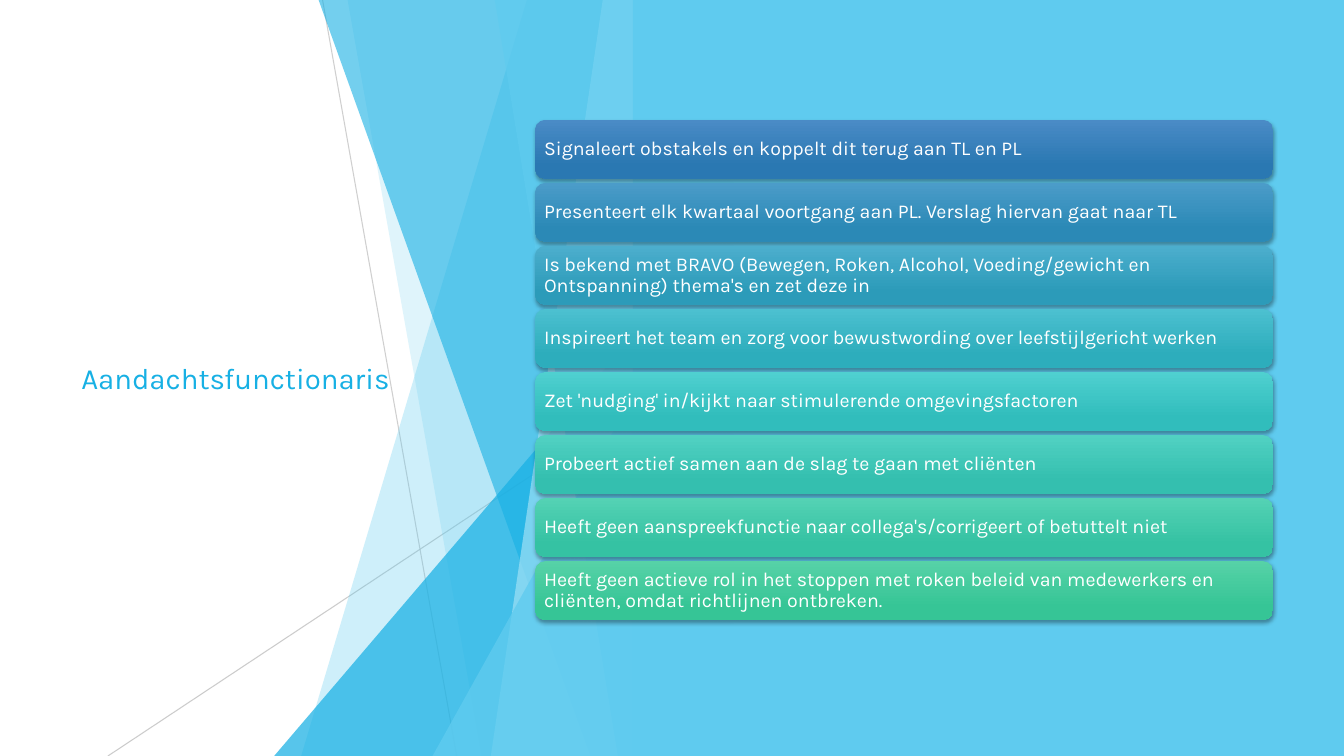
from lxml.etree import SubElement
from pptx import Presentation
from pptx.dml.color import RGBColor
from pptx.enum.shapes import MSO_CONNECTOR, MSO_SHAPE
from pptx.enum.text import MSO_ANCHOR, PP_ALIGN
from pptx.oxml.ns import qn
from pptx.util import Cm, Pt

SLIDE_W, SLIDE_H = 33.87, 19.05
PANEL_LEFT = 15.95
FONT = "Karla"

# Lines: start and end as (distance from the right edge, height fraction), opacity
LINES = [((7.82, 0), (4.44, 1), 75), ((0, 0.54), (13.23, 1), 80)]
# Bands: distance from the right edge at top and bottom, colour, opacity
BACK_BANDS = [(2.67, 8.36, "5FCBEF", 30), (7.19, 3.81, "5FCBEF", 20)]
FRONT_BANDS = [
    (7.92, 1.07, "17B0E4", 60),
    (0.76, 3.58, "9FE0F5", 70),
    (3.48, 0.38, "5FCBEF", 65),
]
# Bars: text, top colour, bottom colour
TASKS = [
    ("Signaleert obstakels en koppelt dit terug aan TL en PL", "4A8BC6", "2A78B2"),
    ("Presenteert elk kwartaal voortgang aan PL. Verslag hiervan gaat naar TL",
     "4B9CC9", "2B89B6"),
    ("Is bekend met BRAVO (Bewegen, Roken, Alcohol, Voeding/gewicht en "
     "Ontspanning) thema's en zet deze in", "4CAECD", "2C9BB9"),
    ("Inspireert het team en zorg voor bewustwording over leefstijlgericht werken",
     "4CC0D0", "2DADBC"),
    ("Zet 'nudging' in/kijkt naar stimulerende omgevingsfactoren", "4FD0D0", "31BDBC"),
    ("Probeert actief samen aan de slag te gaan met cliënten", "51D1C2", "34BFAF"),
    ("Heeft geen aanspreekfunctie naar collega's/corrigeert of betuttelt niet",
     "54D2B4", "35C2A3"),
    ("Heeft geen actieve rol in het stoppen met roken beleid van medewerkers en "
     "cliënten, omdat richtlijnen ontbreken.", "56D2A7", "36C596"),
]


def set_color(color, value, opacity=100):
    color.rgb = RGBColor.from_string(value)
    if opacity < 100:
        clr = color._xFill.find(qn("a:srgbClr"))
        SubElement(clr, qn("a:alpha"), val=str(opacity * 1000))


def paint(s, value, opacity=100):
    """Give a shape a flat fill without outline or shadow."""
    s.shadow.inherit = False
    s.line.fill.background()
    s.fill.solid()
    set_color(s.fill.fore_color, value, opacity)


def write(s, text, size, color):
    """Put one left-aligned, vertically centred paragraph in a shape."""
    tf = s.text_frame
    tf.text = text
    tf.word_wrap = True
    tf.vertical_anchor = MSO_ANCHOR.MIDDLE
    p = tf.paragraphs[0]
    p.alignment = PP_ALIGN.LEFT
    font = p.runs[0].font
    font.name, font.size = FONT, Pt(size)
    set_color(font.color, color)
    return p


def add_line(shapes, x1, y1, x2, y2, opacity):
    s = shapes.add_connector(MSO_CONNECTOR.STRAIGHT, Cm(x1), Cm(y1), Cm(x2), Cm(y2))
    s.line.width = Pt(0.75)
    s.line.fill.solid()
    set_color(s.line.fill.fore_color, "BFBFBF", opacity)
    SubElement(s._element.spPr, qn("a:effectLst"))


def add_band(shapes, right, height, top_gap, bottom_gap, color, opacity):
    """Add a full-height band with a slanted left side."""
    fb = shapes.build_freeform(Cm(right - top_gap), 0)
    fb.add_line_segments([(Cm(right), 0), (Cm(right), Cm(height)),
                          (Cm(right - bottom_gap), Cm(height))])
    paint(fb.convert_to_shape(), color, opacity)


def add_corner(shapes, right, bottom, width, height, color, opacity):
    """Add a triangle with its right angle at the bottom right."""
    s = shapes.add_shape(MSO_SHAPE.ISOSCELES_TRIANGLE, Cm(right - width),
                         Cm(bottom - height), Cm(width), Cm(height))
    s.adjustments[0] = 1
    paint(s, color, opacity)


def add_facets(shapes, right, height):
    for (d1, f1), (d2, f2), opacity in LINES:
        add_line(shapes, right - d1, height * f1, right - d2, height * f2, opacity)
    for band in BACK_BANDS:
        add_band(shapes, right, height, *band)
    add_corner(shapes, right, height, 9.04, 10.59, "17B0E4", 72)
    for band in FRONT_BANDS:
        add_band(shapes, right, height, *band)
    add_corner(shapes, right, height, 5.05, 9.07, "5FCBEF", 80)


def add_title(shapes, left, top, width, height):
    s = shapes.add_textbox(Cm(left), Cm(top), Cm(width), Cm(height))
    write(s, "Aandachtsfunctionaris", 21, "17B0E4")


def add_panel(shapes, left, top, width, height):
    s = shapes.add_shape(MSO_SHAPE.RECTANGLE, Cm(left), Cm(top), Cm(width), Cm(height))
    paint(s, "5FCBEF")


def add_drop_shadow(s):
    s.shadow.inherit = False
    effects = s._element.spPr.find(qn("a:effectLst"))
    shadow = SubElement(effects, qn("a:outerShdw"), blurRad=str(Pt(3)),
                        dist=str(Pt(2)), dir="5400000", rotWithShape="0")
    clr = SubElement(shadow, qn("a:srgbClr"), val="000000")
    SubElement(clr, qn("a:alpha"), val="35000")


def add_bar(shapes, left, top, width, height, text, top_color, bottom_color):
    s = shapes.add_shape(MSO_SHAPE.ROUNDED_RECTANGLE, Cm(left), Cm(top),
                         Cm(width), Cm(height))
    s.line.fill.background()
    s.fill.gradient()
    s.fill.gradient_angle = 270
    stops = zip(s.fill.gradient_stops, (0, 0.78), (top_color, bottom_color))
    for stop, position, color in stops:
        stop.position = position
        set_color(stop.color, color)
    add_drop_shadow(s)
    tf = s.text_frame
    tf.margin_left = tf.margin_right = tf.margin_top = tf.margin_bottom = Cm(0.15)
    write(s, text, 14, "FFFFFF").line_spacing = 0.9


def add_task_list(shapes, left, top, width, height, gap=0.11):
    bar_h = (height + gap) / len(TASKS) - gap
    for i, task in enumerate(TASKS):
        add_bar(shapes, left, top + i * (bar_h + gap), width, bar_h, *task)


def main():
    prs = Presentation()
    prs.slide_width, prs.slide_height = Cm(SLIDE_W), Cm(SLIDE_H)
    shapes = prs.slides.add_slide(prs.slide_layouts[6]).shapes
    add_facets(shapes, PANEL_LEFT, SLIDE_H)
    add_title(shapes, 1.8, 3.84, 9.86, 11.38)
    add_panel(shapes, PANEL_LEFT, 0, SLIDE_W - PANEL_LEFT, SLIDE_H)
    add_task_list(shapes, 13.49, 3.02, 18.59, 12.6)
    prs.save("out.pptx")


if __name__ == "__main__":
    main()
